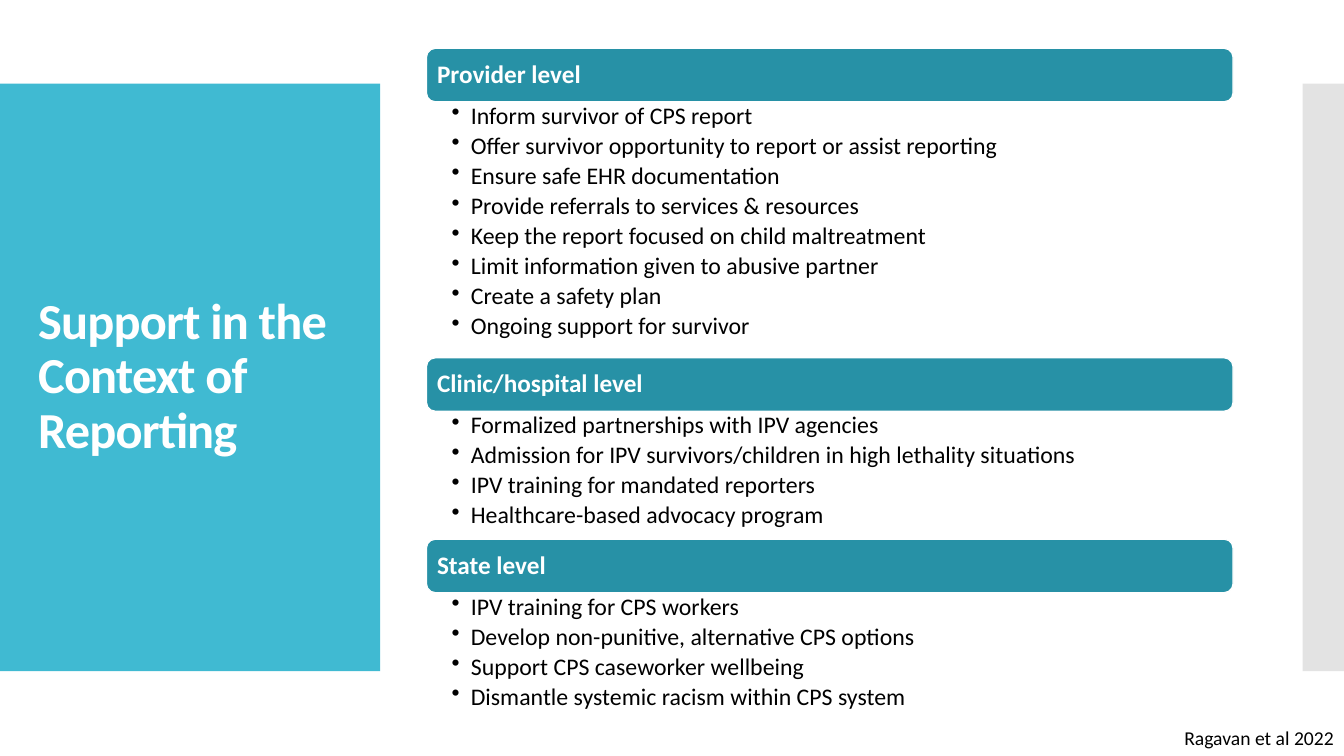
from pptx import Presentation
from pptx.dml.color import RGBColor
from pptx.enum.shapes import MSO_SHAPE as Shape
from pptx.enum.text import MSO_ANCHOR as Anchor, PP_ALIGN as Align
from pptx.util import Pt
from lxml.etree import SubElement
from pptx.oxml.ns import qn

PX = 9144  # 100 px to the inch


class Theme:
    font = "Calibri"
    panel, strip, band = "40BAD2", "E3E3E3", "2791A6"
    white, black = "FFFFFF", "000000"
    title_size, band_size, list_size, credit_size = 36, 18, 17, 14


def add_block(kind, left, top, width, height, fill=None):
    """Add a preset shape, or a text box when kind is None."""
    frame = [length * PX for length in (left, top, width, height)]
    if kind is None:
        block = slide.shapes.add_textbox(*frame)
    else:
        block = slide.shapes.add_shape(kind, *frame)
        block.shadow.inherit = False
        block.fill.solid()
        block.fill.fore_color.rgb = RGBColor.from_string(fill)
        block.line.fill.background()
    block.text_frame.word_wrap = True
    return block


def add_span(para, text, size, color, bold=False):
    span = para.add_run()
    span.text = text
    span.font.name = Theme.font
    span.font.size = Pt(size)
    span.font.bold = bold
    span.font.color.rgb = RGBColor.from_string(color)
    return span


deck = Presentation()
deck.slide_width, deck.slide_height = 1333 * PX, 750 * PX
slide = deck.slides.add_slide(deck.slide_layouts[6])

# Side panels and title
add_block(Shape.RECTANGLE, 0, 83, 377, 583, Theme.panel)
add_block(Shape.RECTANGLE, 1292, 83, 41, 583, Theme.strip)

title = add_block(None, 28, 123, 322, 503).text_frame
title.vertical_anchor = Anchor.MIDDLE
para = title.paragraphs[0]
para.line_spacing = 0.9
span = add_span(para, "Support in the Context of Reporting",
                Theme.title_size, Theme.white, True)
span.font._element.set("spc", "-60")

# Stacked levels: a band, then its list
levels = {
    "Provider level": [
        "Inform survivor of CPS report",
        "Offer survivor opportunity to report or assist reporting",
        "Ensure safe EHR documentation",
        "Provide referrals to services & resources",
        "Keep the report focused on child maltreatment",
        "Limit information given to abusive partner",
        "Create a safety plan",
        "Ongoing support for survivor",
    ],
    "Clinic/hospital level": [
        "Formalized partnerships with IPV agencies",
        "Admission for IPV survivors/children in high lethality situations",
        "IPV training for mandated reporters",
        "Healthcare-based advocacy program",
    ],
    "State level": [
        "IPV training for CPS workers",
        "Develop non-punitive, alternative CPS options",
        "Support CPS caseworker wellbeing",
        "Dismantle systemic racism within CPS system",
    ],
}
LEFT, WIDTH, BAND_HEIGHT, ROW_HEIGHT = 423, 800, 53, 31.7
top = 48
for heading, items in levels.items():
    band = add_block(Shape.ROUNDED_RECTANGLE, LEFT, top, WIDTH, BAND_HEIGHT, Theme.band)
    band.line.color.rgb = RGBColor.from_string(Theme.white)
    band.line.width = Pt(0.85)
    band.text_frame.vertical_anchor = Anchor.MIDDLE
    band.text_frame.margin_left = 8 * PX
    para = band.text_frame.paragraphs[0]
    para.alignment = Align.LEFT
    para.line_spacing = 0.9
    add_span(para, heading, Theme.band_size, Theme.white, True)
    top += BAND_HEIGHT

    list_height = round(ROW_HEIGHT * len(items))
    body = add_block(None, LEFT, top, WIDTH, list_height).text_frame
    body.margin_left, body.margin_right = 25 * PX, 13 * PX
    body.margin_top = body.margin_bottom = 2 * PX
    for index, item in enumerate(items):
        para = body.add_paragraph() if index else body.paragraphs[0]
        para.line_spacing = 0.9
        para.space_after = Pt(3.1)
        properties = para._p.get_or_add_pPr()
        properties.set("marL", str(19 * PX))
        properties.set("indent", str(-19 * PX))
        SubElement(properties, qn("a:buChar"), char="•")
        add_span(para, item, Theme.list_size, Theme.black)
    top += list_height

# Credit
credit = add_block(None, 1080, 715, 253, 34)
para = credit.text_frame.paragraphs[0]
para.alignment = Align.RIGHT
add_span(para, "Ragavan et al 2022", Theme.credit_size, Theme.black)

deck.save("out.pptx")
